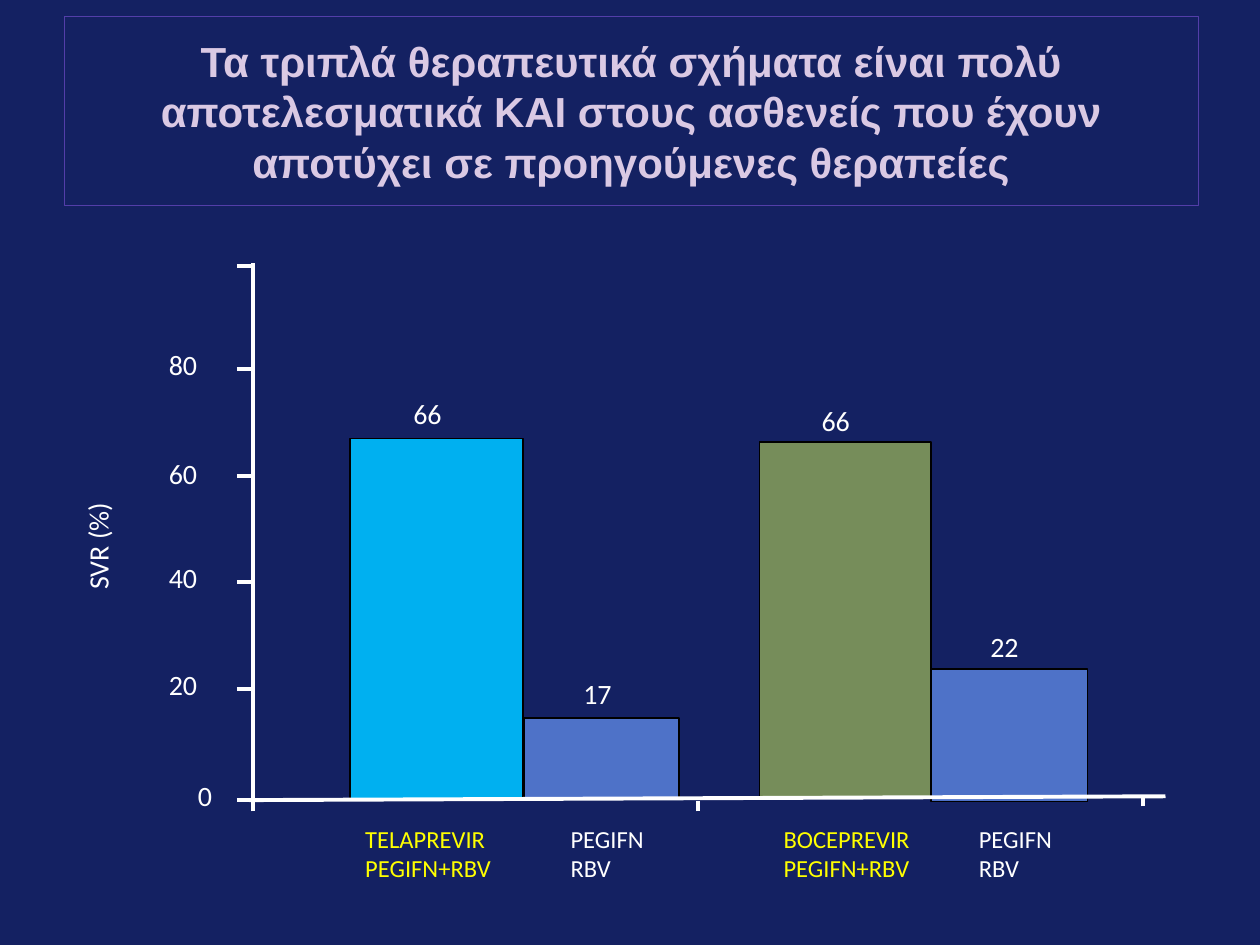
from typing import NamedTuple

from lxml import etree
from pptx import Presentation
from pptx.dml.color import RGBColor
from pptx.enum.shapes import MSO_CONNECTOR, MSO_SHAPE
from pptx.enum.text import MSO_ANCHOR, PP_ALIGN
from pptx.oxml.ns import qn
from pptx.util import Pt

STRAIGHT = MSO_CONNECTOR.STRAIGHT
RECT = MSO_SHAPE.RECTANGLE
MIDDLE = MSO_ANCHOR.MIDDLE
CENTER = PP_ALIGN.CENTER

PX = 9144  # EMU per px, 100 px to the inch
COLORS = {
    "background": "142162",
    "title": "DAC9E4",
    "frame": "533EA9",
    "white": "FFFFFF",
    "black": "000000",
    "yellow": "FFFF00",
    "cyan": "00B0F0",
    "green": "768D5A",
    "blue": "4E72C8",
}


class Bar(NamedTuple):
    left: int
    top: int
    width: int
    height: int
    fill: str
    value: str
    value_left: int
    value_top: int


class Category(NamedTuple):
    left: int
    width: int
    lines: str
    color: str


class Tick(NamedTuple):
    y: int
    label: str
    label_left: int
    label_top: int


BARS = [
    Bar(278, 348, 137, 286, "cyan", "66", 328, 318),
    Bar(416, 570, 123, 63, "blue", "17", 463, 540),
    Bar(739, 531, 124, 105, "blue", "22", 786, 503),
    Bar(603, 351, 136, 283, "green", "66", 652, 323),
]
CATEGORIES = [
    Category(280, 141, "TELAPREVIR\nPEGIFN+RBV", "yellow"),
    Category(443, 88, "PEGIFN\nRBV", "white"),
    Category(612, 132, "BOCEPREVIR\nPEGIFN+RBV", "yellow"),
    Category(767, 88, "PEGIFN\nRBV", "white"),
]
TICKS = [
    Tick(635, "0", 157, 621),
    Tick(547, "20", 134, 533),
    Tick(462, "40", 134, 448),
    Tick(378, "60", 134, 365),
    Tick(293, "80", 134, 279),
    Tick(211, "", 134, 197),
]
AXIS_X = 201


def rgb(name: str) -> RGBColor:
    return RGBColor.from_string(COLORS[name])


def add_line(s, x1: int, y1: int, x2: int, y2: int) -> None:
    c = s.shapes.add_connector(STRAIGHT, x1 * PX, y1 * PX, x2 * PX, y2 * PX)
    c.line.color.rgb = rgb("white")
    c.line.width = Pt(2.25)
    etree.SubElement(c._element.spPr, qn("a:effectLst"))


def add_bar(s, bar: Bar) -> None:
    sp = s.shapes.add_shape(RECT, bar.left * PX, bar.top * PX,
                            bar.width * PX, bar.height * PX)
    sp.shadow.inherit = False
    sp.fill.solid()
    sp.fill.fore_color.rgb = rgb(bar.fill)
    sp.line.color.rgb = rgb("black")
    sp.line.width = Pt(0.88)


def add_text(s, left: int, top: int, width: int, height: int, text: str,
             size: int, color: str = "white", wrap: bool = False):
    sp = s.shapes.add_textbox(left * PX, top * PX, width * PX, height * PX)
    tf = sp.text_frame
    tf.word_wrap = wrap
    tf.text = text
    for p in tf.paragraphs:
        p.font.size = Pt(size)
        p.font.name = "Calibri"
        p.font.color.rgb = rgb(color)
    return sp


def add_label(s, left: int, top: int, text: str, width: int = 39,
              height: int = 28):
    """Add an axis or value label without insets."""
    sp = add_text(s, left, top, width, height, text, 16)
    tf = sp.text_frame
    tf.margin_left = tf.margin_right = tf.margin_top = tf.margin_bottom = 0
    tf.paragraphs[0].line_spacing = 0.9
    return sp


def set_title(s, text: str) -> None:
    sp = s.shapes.title
    sp.left, sp.top, sp.width, sp.height = 51 * PX, 13 * PX, 900 * PX, 150 * PX
    sp.line.color.rgb = rgb("frame")
    sp.line.width = Pt(0.75)
    tf = sp.text_frame
    tf.word_wrap = True
    tf.vertical_anchor = MIDDLE
    tf.text = text
    p = tf.paragraphs[0]
    p.alignment = CENTER
    p.font.size = Pt(24)
    p.font.name = "Arial"
    p.font.bold = True
    p.font.color.rgb = rgb("title")


def main() -> None:
    prs = Presentation()
    prs.slide_width, prs.slide_height = 1000 * PX, 750 * PX
    s = prs.slides.add_slide(prs.slide_layouts[5])
    s.background.fill.solid()
    s.background.fill.fore_color.rgb = rgb("background")

    set_title(s, "Τα τριπλά θεραπευτικά σχήματα είναι πολύ αποτελεσματικά ΚΑΙ "
                 "στους ασθενείς που έχουν αποτύχει σε προηγούμενες θεραπείες")

    # Bars and their values
    for bar in BARS:
        add_bar(s, bar)
        add_label(s, bar.value_left, bar.value_top, bar.value)

    # Value axis
    add_line(s, AXIS_X, 209, AXIS_X, 634)
    for tick in TICKS:
        add_line(s, 188, tick.y, 200, tick.y)
        if tick.label:
            add_label(s, tick.label_left, tick.label_top, tick.label,
                      width=39 if len(tick.label) > 1 else 19)
    add_label(s, 36, 399, "SVR (%)", width=100, height=38).rotation = 270

    # Category axis, slightly tilted, with its group ticks
    add_line(s, 198, 635, 925, 632)
    for x, y in ((AXIS_X, 636), (554, 636), (907, 632)):
        add_line(s, x, y + 8, x, y)
    for cat in CATEGORIES:
        add_text(s, cat.left, 649, cat.width, 57, cat.lines, 14, cat.color,
                 wrap=True)

    prs.save("out.pptx")


if __name__ == "__main__":
    main()
